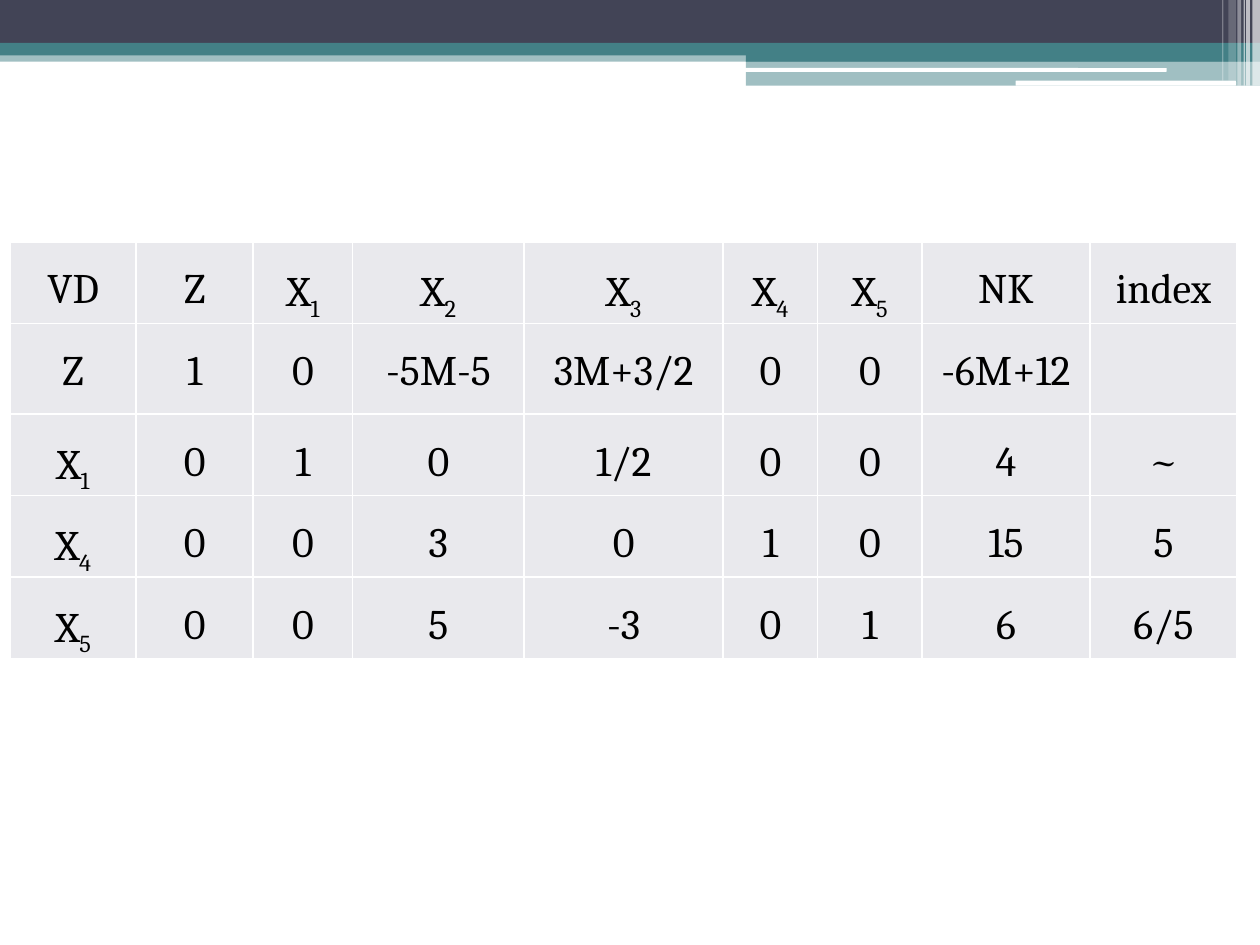
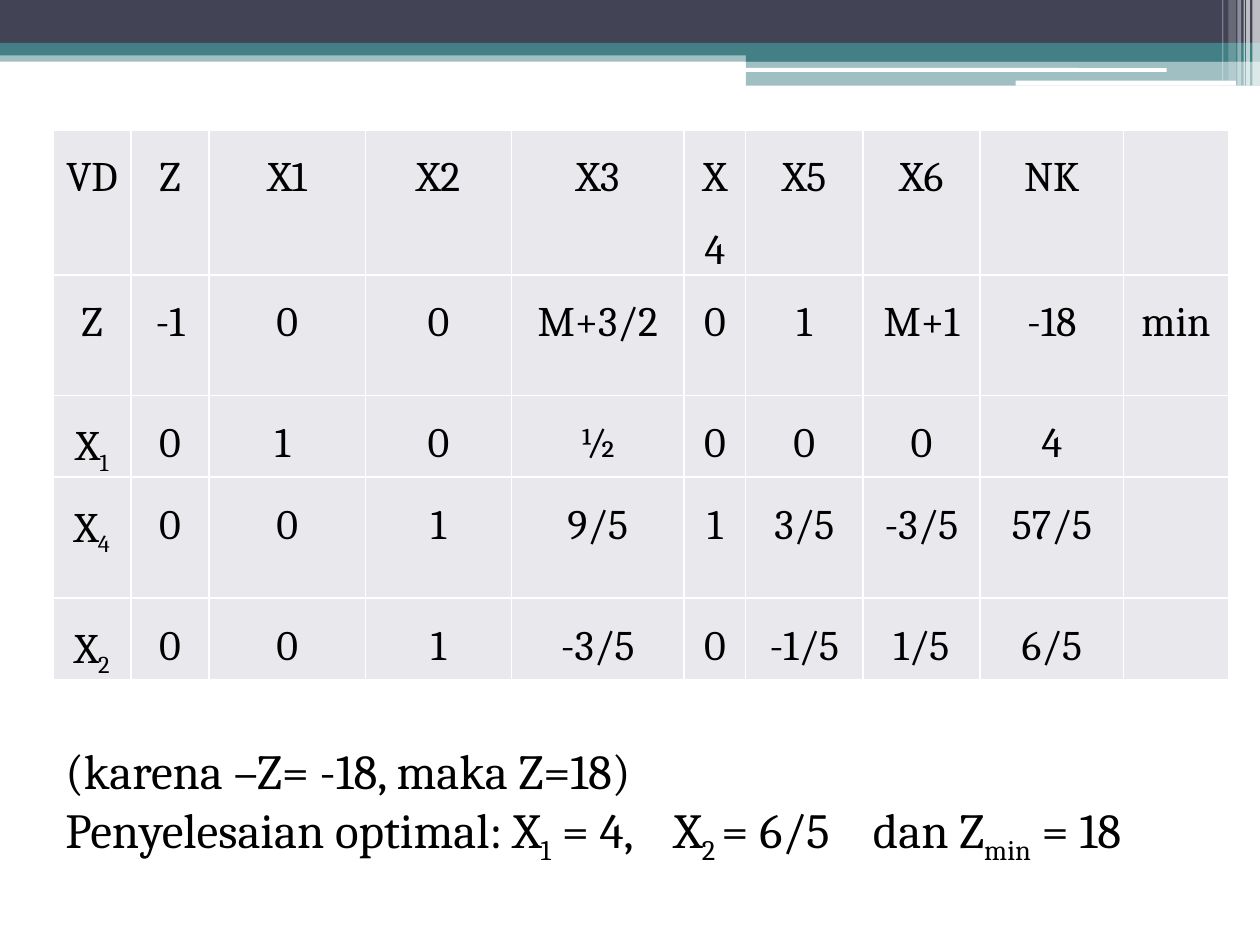
"""Build two simplex tableau slides under a shared layered band."""
from dataclasses import dataclass
from typing import Any

from lxml import etree
from pptx import Presentation
from pptx import util as u
from pptx.dml import color as dml_color
from pptx.enum import shapes, text
from pptx.oxml import ns

COLOURS = {"navy": "424456", "teal": "438086", "white": "FFFFFF", "cell": "E9E9ED", "ink": "000000"}
FONT = "Cambria"
CELL_FORMAT = {"margin_left": u.Inches(0.07), "margin_right": u.Inches(0.07),
               "margin_top": 0, "margin_bottom": 0}
CELL_PARAGRAPH = {"alignment": text.PP_ALIGN.CENTER, "line_spacing": 1.5}
TABLE_FORMAT = {"first_row": False, "horz_banding": False}
NOTE_FRAME = {"word_wrap": True, "vertical_anchor": text.MSO_ANCHOR.TOP,
              "auto_size": text.MSO_AUTO_SIZE.SHAPE_TO_FIT_TEXT}


@dataclass(frozen=True)
class Band:
    """A strip of the slide header; opacity is a percentage."""
    left: float
    top: float
    width: float
    height: float
    colour: str
    opacity: int = 100
    rounded: bool = False


@dataclass(frozen=True)
class Tableau:
    """A simplex table; bars in a cell enclose a subscript."""
    left: float
    top: float
    columns: list[float]
    rows: list[float]
    cells: list[list[str]]


@dataclass(frozen=True)
class Note:
    """A text box of paragraphs; tab stops count from the text edge."""
    left: float
    top: float
    width: float
    height: float
    paragraphs: list[str]
    tab_stops: list[float]


BANDS = [
    Band(0, 0.4, 10, 0.09, "teal", 50),
    Band(0, 0, 10, 0.34, "navy"),
    Band(0, 0.34, 10, 0.1, "teal"),
    Band(5.92, 0.39, 4.08, 0.1, "teal"),
    Band(5.92, 0.48, 4.08, 0.2, "teal", 50),
    Band(5.91, 0.54, 3.35, 0.03, "white", rounded=True),
    Band(8.06, 0.64, 1.75, 0.04, "white", rounded=True),
    Band(9.94, 0, 0.06, 0.68, "white", 65),
    Band(9.89, 0, 0.03, 0.68, "white", 65),
    Band(9.87, 0, 0.01, 0.68, "white", 60),
    Band(9.82, 0, 0.03, 0.68, "white", 40),
    Band(9.75, 0, 0.06, 0.64, "white", 20),
    Band(9.7, 0, 0.01, 0.64, "white", 30),
]

ITERATION = Tableau(
    0.08, 1.92,
    [1, 0.93, 0.79, 1.36, 1.58, 0.75, 0.83, 1.33, 1.17],
    [0.5, 0.72, 0.5, 0.5, 0.5],
    [
        ["VD", "Z", "X|1|", "X|2|", "X|3|", "X|4|", "X|5|", "NK", "index"],
        ["Z", "1", "0", "-5M-5", "3M+3/2", "0", "0", "-6M+12", ""],
        ["X|1|", "0", "1", "0", "1/2", "0", "0", "4", "~"],
        ["X|4|", "0", "0", "3", "0", "1", "0", "15", "5"],
        ["X|5|", "0", "0", "5", "-3", "0", "1", "6", "6/5"],
    ],
)

OPTIMUM = Tableau(
    0.42, 1.03,
    [0.62, 0.62, 1.24, 1.16, 1.37, 0.49, 0.93, 0.93, 1.14, 0.83],
    [0.52, 0.96, 0.52, 0.96, 0.52],
    [
        ["VD", "Z", "X1", "X2", "X3", "X4", "X5", "X6", "NK", ""],
        ["Z", "-1", "0", "0", "M+3/2", "0", "1", "M+1", "-18", "min"],
        ["X|1|", "0", "1 ", "0", "½", "0", "0", "0", "4", ""],
        ["X|4|", "0", "0", "1", "9/5", "1", "3/5", "-3/5", "57/5", ""],
        ["X|2|", "0", "0", "1", "-3/5", "0", "-1/5", "1/5", "6/5", ""],
    ],
)

SOLUTION = Note(
    0.42, 5.83, 9, 1.51,
    ["(karena –Z= -18, maka Z=18)",
     "Penyelesaian optimal: X|1| = 4,\tX|2 |= 6/5\tdan Z|min| = 18"],
    [4.83, 6.41],
)


def rgb(name: str) -> dml_color.RGBColor:
    """Look up a named colour."""
    return dml_color.RGBColor.from_string(COLOURS[name])


def apply_format(target: Any, values: dict[str, Any]) -> None:
    """Set each attribute named in the dict."""
    for name, value in values.items():
        setattr(target, name, value)


def paint(fill: Any, colour: str) -> None:
    """Give a fill one solid colour."""
    fill.solid()
    fill.fore_color.rgb = rgb(colour)


def write_text(paragraph: Any, content: str, size: int) -> None:
    """Write runs, lowering the parts between bars."""
    for index, part in enumerate(content.split("|")):
        if not part:
            continue
        run = paragraph.add_run()
        run.text = part
        apply_format(run.font, {"name": FONT, "size": u.Pt(size)})
        run.font.color.rgb = rgb("ink")
        if index % 2:
            run.font._element.set("baseline", "-25000")


def draw_band(slide: Any, band: Band) -> None:
    """Draw one header strip."""
    kind = shapes.MSO_SHAPE.ROUNDED_RECTANGLE if band.rounded else shapes.MSO_SHAPE.RECTANGLE
    shape = slide.shapes.add_shape(kind, *map(u.Inches, (band.left, band.top, band.width, band.height)))
    shape.shadow.inherit = False
    shape.line.fill.background()
    paint(shape.fill, band.colour)
    if band.opacity < 100:
        colour = shape._element.spPr.find(".//" + ns.qn("a:srgbClr"))
        etree.SubElement(colour, ns.qn("a:alpha"), val=str(band.opacity * 1000))


def draw_borders(cell: Any) -> None:
    """Rule all four sides of a cell in white."""
    properties = cell._tc.get_or_add_tcPr()
    for side in ("lnL", "lnR", "lnT", "lnB"):
        line = etree.SubElement(properties, ns.qn(f"a:{side}"), w=str(u.Pt(1)))
        fill = etree.SubElement(line, ns.qn("a:solidFill"))
        etree.SubElement(fill, ns.qn("a:srgbClr"), val=COLOURS["white"])


def draw_tableau(slide: Any, tableau: Tableau) -> None:
    """Draw a simplex table."""
    frame = slide.shapes.add_table(
        len(tableau.rows), len(tableau.columns), u.Inches(tableau.left), u.Inches(tableau.top),
        u.Inches(sum(tableau.columns)), u.Inches(sum(tableau.rows)))
    table = frame.table
    apply_format(table, TABLE_FORMAT)
    for column, width in zip(table.columns, tableau.columns):
        column.width = u.Inches(width)
    for row, height, contents in zip(table.rows, tableau.rows, tableau.cells):
        row.height = u.Inches(height)
        for cell, content in zip(row.cells, contents):
            apply_format(cell, CELL_FORMAT)
            draw_borders(cell)
            paint(cell.fill, "cell")
            paragraph = cell.text_frame.paragraphs[0]
            apply_format(paragraph, CELL_PARAGRAPH)
            write_text(paragraph, content, 24)


def draw_note(slide: Any, note: Note) -> None:
    """Draw a text box with tab stops."""
    box = slide.shapes.add_textbox(*map(u.Inches, (note.left, note.top, note.width, note.height)))
    frame = box.text_frame
    apply_format(frame, NOTE_FRAME)
    for index, content in enumerate(note.paragraphs):
        paragraph = frame.add_paragraph() if index else frame.paragraphs[0]
        if "\t" in content:
            tabs = etree.SubElement(paragraph._p.get_or_add_pPr(), ns.qn("a:tabLst"))
            for stop in note.tab_stops:
                etree.SubElement(tabs, ns.qn("a:tab"), pos=str(u.Inches(stop)), algn="l")
        write_text(paragraph, content, 28)


def add_slide(presentation: Any, tableau: Tableau) -> Any:
    """Add a slide with the header bands and a tableau."""
    slide = presentation.slides.add_slide(presentation.slide_layouts[6])
    paint(slide.background.fill, "white")
    for band in BANDS:
        draw_band(slide, band)
    draw_tableau(slide, tableau)
    return slide


def main() -> None:
    """Build and save the presentation."""
    presentation = Presentation()
    apply_format(presentation, {"slide_width": u.Inches(10), "slide_height": u.Inches(7.5)})
    add_slide(presentation, ITERATION)
    draw_note(add_slide(presentation, OPTIMUM), SOLUTION)
    presentation.save("out.pptx")


if __name__ == "__main__":
    main()
